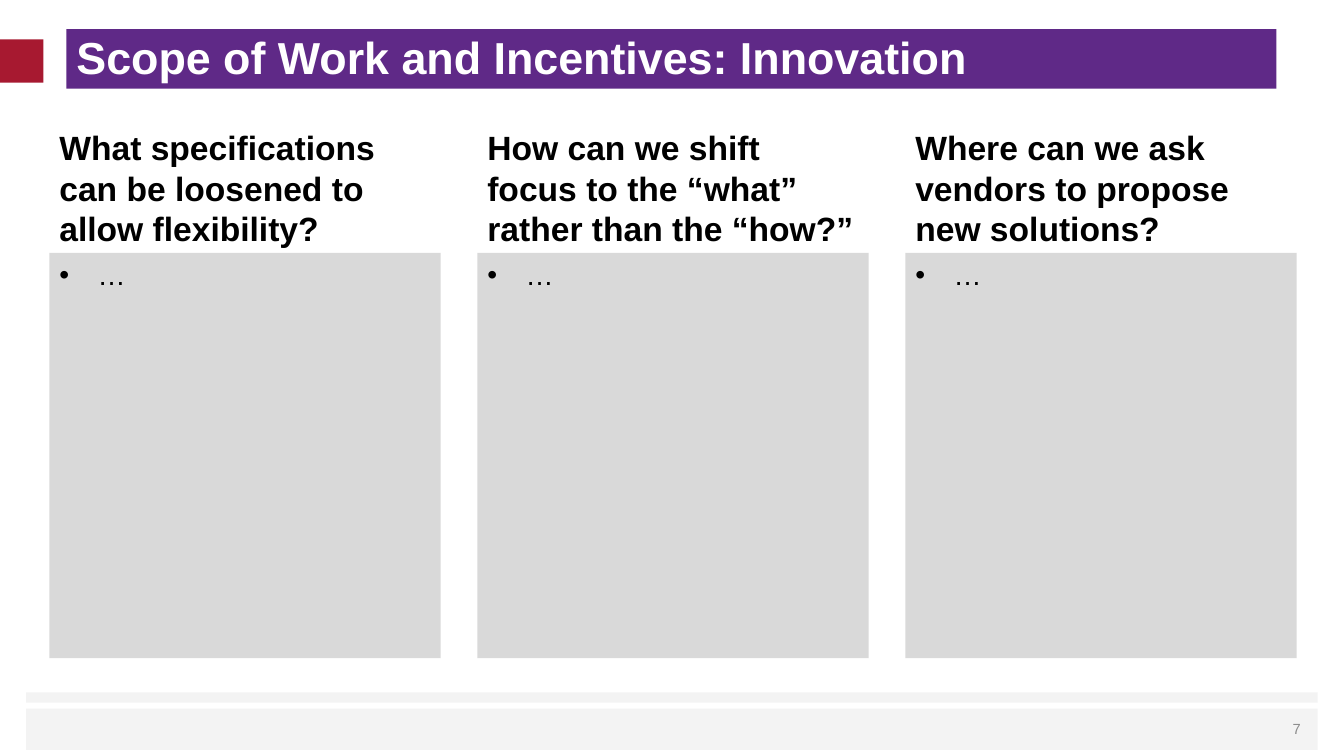
from pptx import Presentation
from pptx.dml.color import RGBColor
from pptx.enum.shapes import MSO_SHAPE
from pptx.enum.text import MSO_ANCHOR, PP_ALIGN
from pptx.oxml.ns import qn
from pptx.util import Inches, Pt
from lxml.etree import SubElement

TITLE = "Scope of Work and Incentives: Innovation"
COLUMNS = [
    ("What specifications can be loosened to allow flexibility?", "…"),
    ("How can we shift focus to the “what” rather than the “how?”", "…"),
    ("Where can we ask vendors to propose new solutions?", "…"),
]
PAGE_NUMBER = "7"
COLORS = {
    "purple": "5F2987",
    "red": "A71930",
    "panel": "D9D9D9",
    "footer": "F3F3F3",
    "number": "8C8C8C",
    "black": "000000",
    "white": "FFFFFF",
}
FONT = "Arial"
FIRST_LEFT, LAST_LEFT, COLUMN_WIDTH = 0.49, 8.98, 3.88
HEADING_TOP, HEADING_HEIGHT, PANEL_HEIGHT = 1.73, 0.78, 4.02
BULLET_INDENT = 0.38


def add_rectangle(page, area, color):
    box = page.shapes.add_shape(MSO_SHAPE.RECTANGLE, *map(Inches, area))
    box.shadow.inherit = False
    box.fill.solid()
    box.fill.fore_color.rgb = RGBColor.from_string(COLORS[color])
    box.line.fill.background()
    return box


def write(box, text, size, color, bold=False, anchor=MSO_ANCHOR.TOP, align=PP_ALIGN.LEFT):
    frame = box.text_frame
    frame.word_wrap = True
    frame.vertical_anchor = anchor
    para = frame.paragraphs[0]
    para.alignment = align
    span = para.add_run()
    span.text = text
    span.font.name = FONT
    span.font.size = Pt(size)
    span.font.bold = bold
    span.font.color.rgb = RGBColor.from_string(COLORS[color])
    return para


def add_bullet(para):
    properties = para._p.get_or_add_pPr()
    properties.set("marL", str(Inches(BULLET_INDENT)))
    properties.set("indent", str(-Inches(BULLET_INDENT)))
    SubElement(properties, qn("a:buFont"), typeface=FONT)
    SubElement(properties, qn("a:buChar"), char="•")


def add_column(page, left, heading, item):
    heading_area = (left, HEADING_TOP, COLUMN_WIDTH, HEADING_HEIGHT)
    heading_box = page.shapes.add_textbox(*map(Inches, heading_area))
    write(heading_box, heading, 24, "black", bold=True, anchor=MSO_ANCHOR.BOTTOM)
    panel_area = (left, HEADING_TOP + HEADING_HEIGHT, COLUMN_WIDTH, PANEL_HEIGHT)
    panel = add_rectangle(page, panel_area, "panel")
    add_bullet(write(panel, item, 20, "black"))


def main():
    deck = Presentation()
    deck.slide_width, deck.slide_height = Inches(13.33), Inches(7.5)
    page = deck.slides.add_slide(deck.slide_layouts[6])

    add_rectangle(page, (0.26, 6.87, 12.81, 0.1), "footer")
    add_rectangle(page, (0.26, 7.03, 12.81, 0.41), "footer")
    add_rectangle(page, (0, 0.39, 0.43, 0.43), "red")

    title_bar = add_rectangle(page, (0.66, 0.29, 12, 0.59), "purple")
    title_bar.text_frame.margin_top = 0
    write(title_bar, TITLE, 32, "white", bold=True)

    step = (LAST_LEFT - FIRST_LEFT) / (len(COLUMNS) - 1)
    for index, (heading, item) in enumerate(COLUMNS):
        add_column(page, FIRST_LEFT + index * step, heading, item)

    number_box = page.shapes.add_textbox(*map(Inches, (12.25, 7.03, 0.75, 0.4)))
    write(number_box, PAGE_NUMBER, 10.5, "number", anchor=MSO_ANCHOR.MIDDLE, align=PP_ALIGN.RIGHT)

    deck.save("out.pptx")


if __name__ == "__main__":
    main()
